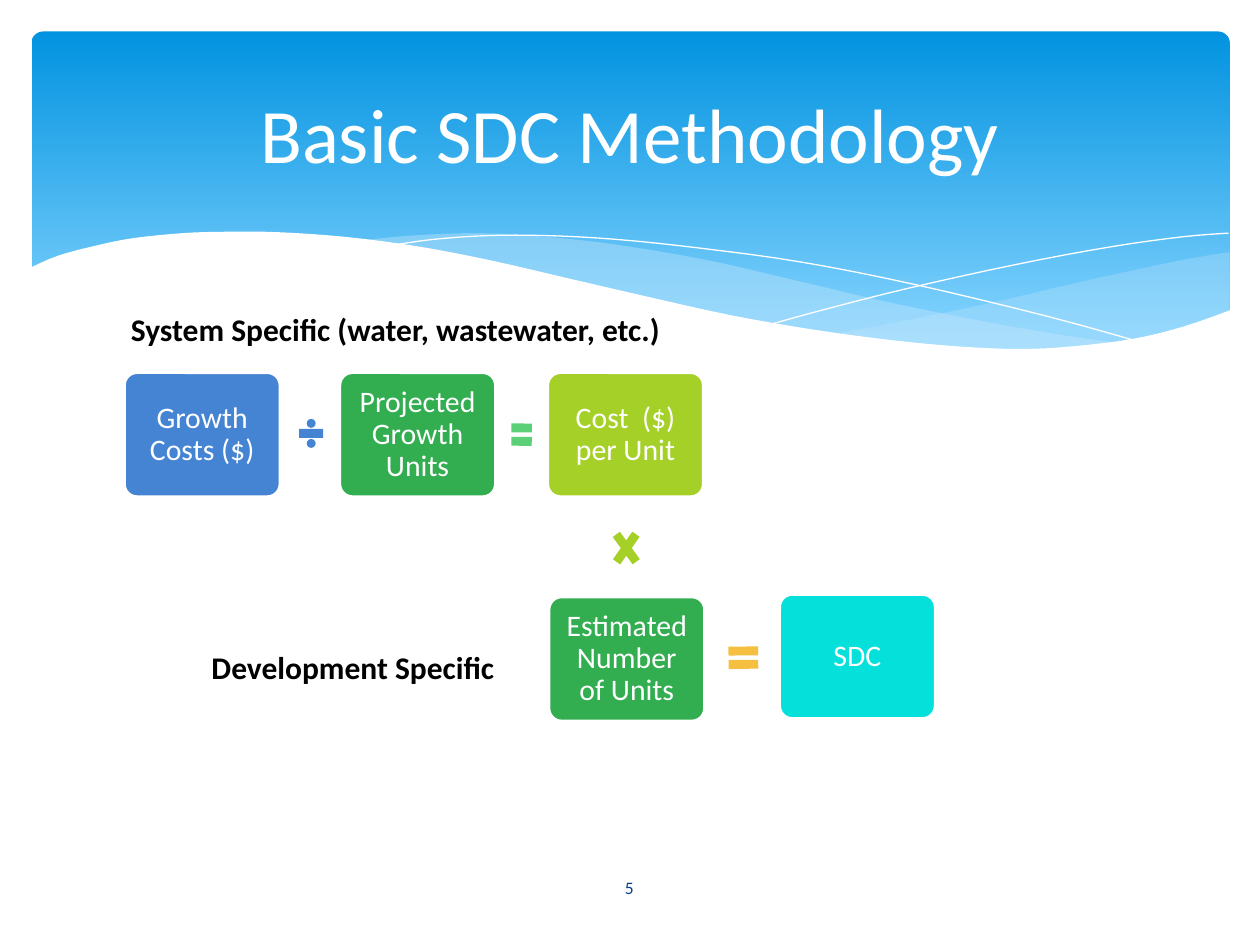
from dataclasses import dataclass

from lxml import etree
from pptx import Presentation
from pptx.dml.color import RGBColor
from pptx.enum.shapes import MSO_SHAPE
from pptx.enum.text import MSO_ANCHOR, PP_ALIGN
from pptx.oxml.ns import qn
from pptx.util import Inches, Pt

ROUNDED = MSO_SHAPE.ROUNDED_RECTANGLE
DIVIDE = MSO_SHAPE.MATH_DIVIDE
EQUAL = MSO_SHAPE.MATH_EQUAL
MULTIPLY = MSO_SHAPE.MATH_MULTIPLY
CENTER, LEFT = PP_ALIGN.CENTER, PP_ALIGN.LEFT
MIDDLE, TOP = MSO_ANCHOR.MIDDLE, MSO_ANCHOR.TOP


@dataclass(frozen=True)
class Theme:
    font: str = "Calibri"
    white: str = "FFFFFF"
    black: str = "000000"
    navy: str = "073E87"
    sky_dark: str = "0293E0"
    sky_light: str = "83D3FE"
    wave: str = "C6E7FC"
    blue: str = "4584D3"
    green: str = "32AE51"
    mint: str = "5BD078"
    lime: str = "A5D028"
    amber: str = "F5C040"
    cyan: str = "05E0DB"
    title_size: int = 44
    label_size: int = 18
    box_size: int = 17
    number_size: int = 10


THEME = Theme()
BOX_W, BOX_H = 1.23, 0.98

RIGHT_WAVE = [
    [(9.76, 2), (9.35, 2.07), (8.61, 2.23), (7.79, 2.42), (7.06, 2.57), (6.61, 2.65)],
    [(6.61, 2.65), (7.05, 2.71), (7.57, 2.76), (8.03, 2.78), (8.54, 2.76),
     (9.05, 2.69), (9.42, 2.59), (9.76, 2.47)],
]
MIDDLE_WAVE = [
    [(8.93, 2.73), (8.37, 2.65), (7.75, 2.54), (7.06, 2.4), (6.29, 2.22),
     (5.69, 2.08), (5.14, 1.98), (4.65, 1.91), (4.2, 1.87), (3.8, 1.85),
     (3.44, 1.86), (3.13, 1.88), (2.86, 1.91)],
    [(2.86, 1.91), (3.42, 1.99), (4.04, 2.11), (4.91, 2.32), (5.66, 2.48),
     (6.34, 2.61), (6.95, 2.7), (7.48, 2.76), (7.96, 2.78), (8.48, 2.77), (8.93, 2.73)],
]
FALLING_LINE = [
    [(3.09, 1.95), (3.44, 1.9), (3.87, 1.87), (4.33, 1.87), (4.89, 1.9), (5.56, 1.97),
     (6.36, 2.08), (7.27, 2.26), (8.31, 2.51), (9.07, 2.72)],
]
RISING_LINE = [
    [(6.13, 2.57), (6.53, 2.46), (7.2, 2.29), (8.06, 2.1), (8.81, 1.96),
     (9.38, 1.88), (9.75, 1.85)],
]
WHITE_WAVE = [
    [(9.77, 2.46), (9.4, 2.59), (8.99, 2.69), (8.5, 2.75), (8.09, 2.77), (7.61, 2.75),
     (7.08, 2.7), (6.48, 2.62), (5.79, 2.5), (5.03, 2.33), (4.47, 2.2), (3.91, 2.07),
     (3.4, 1.97), (2.92, 1.9), (2.5, 1.86), (2.11, 1.84), (1.77, 1.84), (1.46, 1.85),
     (1.06, 1.89), (0.76, 1.95), (0.46, 2.03), (0.23, 2.13)],
    [(0.23, 3.29), (9.77, 3.29)],
]


def rgb(color):
    return RGBColor.from_string(color)


def smooth(points, steps=4):
    padded = [points[0], *points, points[-1]]
    curve = [points[0]]
    for a, b, c, d in zip(padded, padded[1:], padded[2:], padded[3:]):
        for i in range(1, steps + 1):
            t = i / steps
            curve.append(tuple(
                q + t / 2 * (r - p + t * (2 * p - 5 * q + 4 * r - s + t * (3 * (q - r) + s - p)))
                for p, q, r, s in zip(a, b, c, d)))
    return curve


def set_fill(sp, color, alpha=None):
    sp.fill.solid()
    sp.fill.fore_color.rgb = rgb(color)
    if alpha is not None:
        clr = sp.fill._xPr.find(qn("a:solidFill"))[0]
        etree.SubElement(clr, qn("a:alpha"), val=str(alpha * 1000))


def set_line(sp, color=None, width=0):
    if color is None:
        sp.line.fill.background()
    else:
        sp.line.color.rgb = rgb(color)
        sp.line.width = Pt(width)


def write_text(sp, text, size, color=THEME.white, bold=False, align=CENTER,
               anchor=MIDDLE, spacing=None, inset=None):
    tf = sp.text_frame
    tf.word_wrap = True
    tf.vertical_anchor = anchor
    if inset is not None:
        tf.margin_left = tf.margin_right = tf.margin_top = tf.margin_bottom = Inches(inset)
    p = tf.paragraphs[0]
    p.alignment = align
    p.line_spacing = spacing
    r = p.add_run()
    r.text = text
    r.font.name = THEME.font
    r.font.size = Pt(size)
    r.font.bold = bold
    r.font.color.rgb = rgb(color)


def add_text(s, x, y, w, h, text, size, **fmt):
    sp = s.shapes.add_textbox(Inches(x), Inches(y), Inches(w), Inches(h))
    write_text(sp, text, size, **fmt)


def add_preset(s, kind, x, y, w, h):
    sp = s.shapes.add_shape(kind, Inches(x), Inches(y), Inches(w), Inches(h))
    sp.shadow.inherit = False
    set_line(sp)
    return sp


def add_curve(s, curves, fill=None, alpha=None, line=None):
    points = [(Inches(x), Inches(y)) for curve in curves for x, y in smooth(curve)]
    builder = s.shapes.build_freeform(*points[0])
    builder.add_line_segments(points[1:], close=fill is not None)
    sp = builder.convert_to_shape()
    sp.shadow.inherit = False
    set_line(sp, line)
    if fill:
        set_fill(sp, fill, alpha)
    else:
        sp.fill.background()


def add_banner(s):
    sp = add_preset(s, ROUNDED, 0.25, 0.25, 9.51, 2.7)
    sp.adjustments[0] = 0.034
    sp.fill.gradient()
    sp.fill.gradient_angle = 270
    stops = zip(sp.fill.gradient_stops, (0, 0.9), (THEME.sky_dark, THEME.sky_light))
    for stop, position, color in stops:
        stop.position = position
        stop.color.rgb = rgb(color)
    add_curve(s, RIGHT_WAVE, THEME.wave, 29)
    add_curve(s, MIDDLE_WAVE, THEME.wave, 40)
    add_curve(s, FALLING_LINE, line=THEME.white)
    add_curve(s, RISING_LINE, line=THEME.white)
    add_curve(s, WHITE_WAVE, THEME.white)


def add_box(s, x, y, text, color):
    sp = add_preset(s, ROUNDED, x, y, BOX_W, BOX_H)
    sp.adjustments[0] = 0.1
    set_fill(sp, color)
    set_line(sp, THEME.white, 1.25)
    write_text(sp, text, THEME.box_size, spacing=0.9, inset=0.07)


def add_operator(s, kind, x, y, w, color, rotation=0):
    sp = add_preset(s, kind, x, y, w, 0.3)
    sp.rotation = rotation
    set_fill(sp, color)


def main():
    prs = Presentation()
    prs.slide_width, prs.slide_height = Inches(10), Inches(7.5)
    s = prs.slides.add_slide(prs.slide_layouts[6])
    add_banner(s)
    add_text(s, 0.5, 0.37, 9, 1.37, "Basic SDC Methodology", THEME.title_size)
    add_text(s, 4.36, 6.84, 1.27, 0.4, "5", THEME.number_size, color=THEME.navy)

    add_box(s, 0.99, 2.96, "Growth Costs ($)", THEME.blue)
    add_operator(s, DIVIDE, 2.34, 3.29, 0.26, THEME.blue)
    add_box(s, 2.7, 2.96, "Projected Growth Units", THEME.green)
    add_operator(s, EQUAL, 4.03, 3.3, 0.22, THEME.mint, 0.2)
    add_box(s, 4.35, 2.96, "Cost  ($) per Unit", THEME.lime)
    add_operator(s, MULTIPLY, 4.76, 4.2, 0.42, THEME.lime, 89.5)
    add_box(s, 4.36, 4.74, "Estimated Number of Units", THEME.green)
    add_operator(s, EQUAL, 5.74, 5.07, 0.32, THEME.amber, 359.6)
    add_box(s, 6.19, 4.72, "SDC", THEME.cyan)

    label = dict(size=THEME.label_size, color=THEME.black, bold=True, align=LEFT, anchor=TOP)
    add_text(s, 0.94, 2.41, 5.78, 0.4, "System Specific (water, wastewater, etc.)", **label)
    add_text(s, 1.58, 5.09, 3.2, 0.4, "Development Specific", **label)
    prs.save("out.pptx")


if __name__ == "__main__":
    main()
